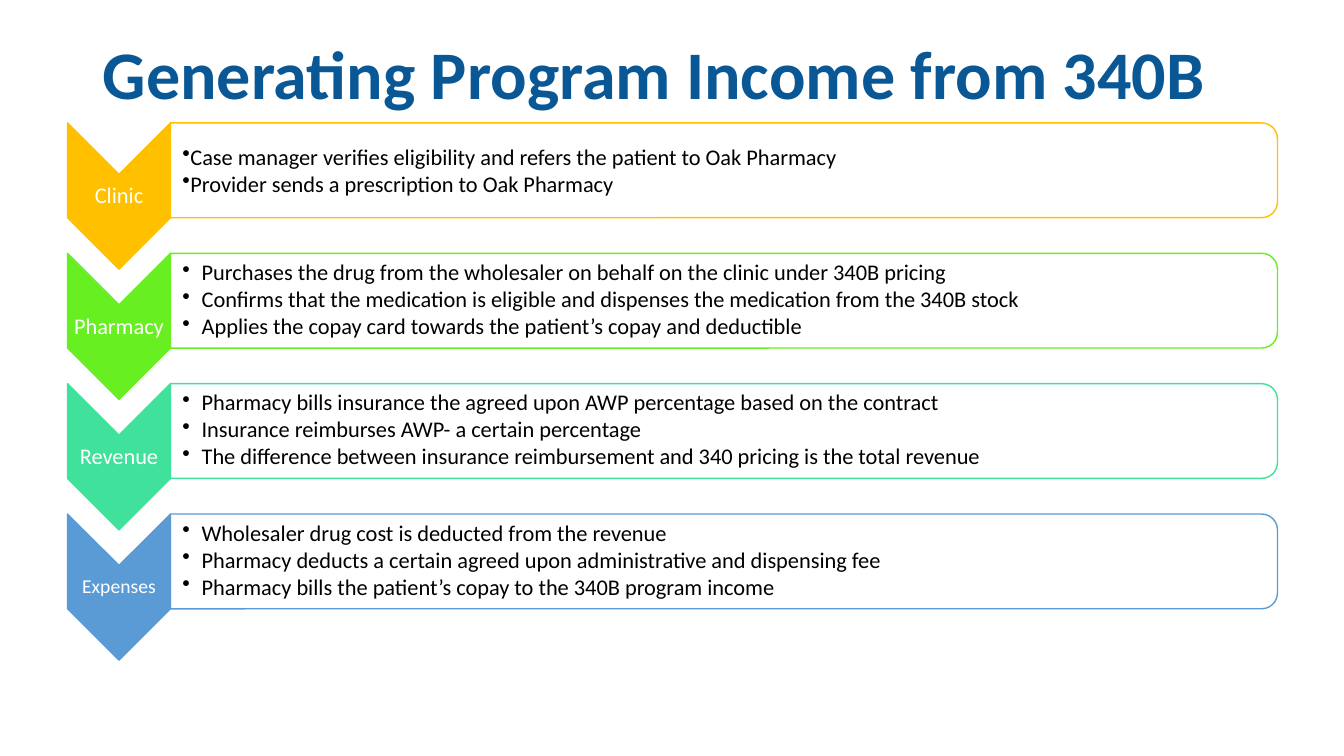
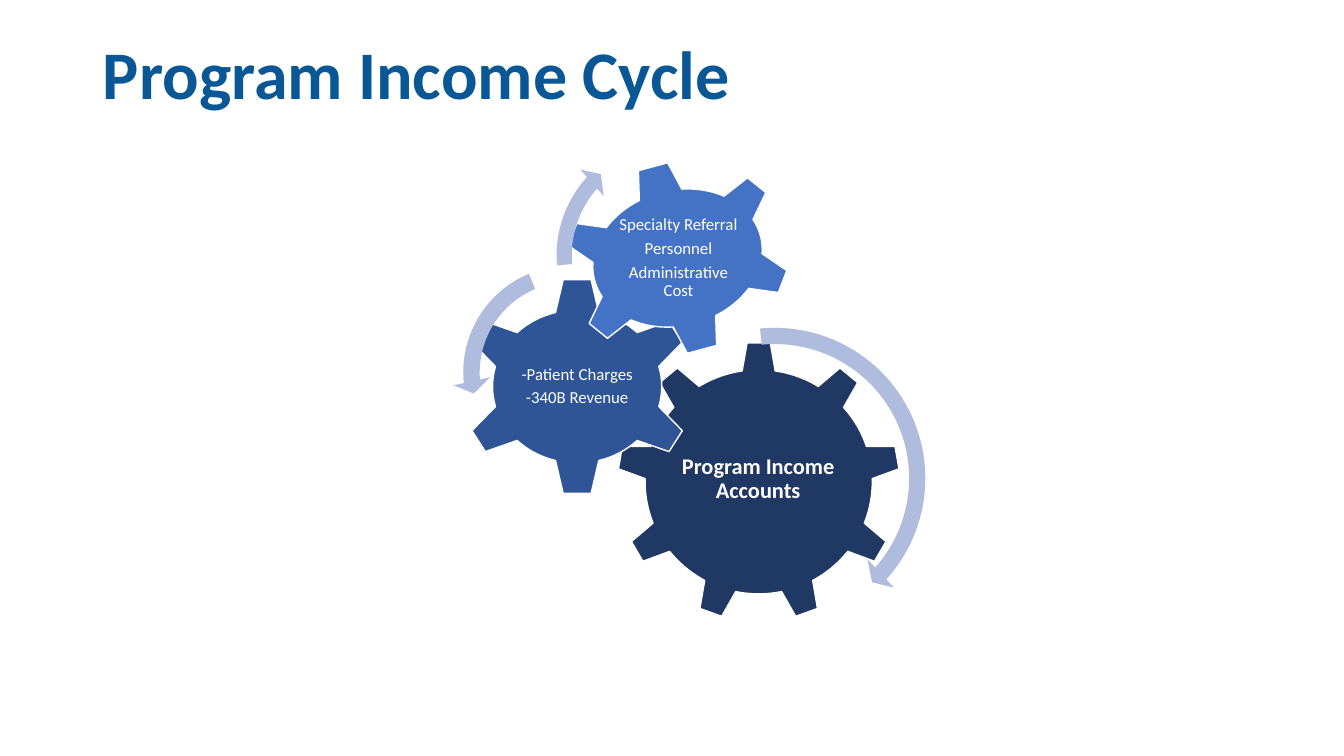
from lxml.etree import SubElement
from pptx import Presentation
from pptx.dml.color import RGBColor
from pptx.enum.shapes import MSO_SHAPE as Preset
from pptx.enum.text import MSO_ANCHOR as Anchor, MSO_AUTO_SIZE as AutoSize, PP_ALIGN as Align
from pptx.oxml.ns import qn
from pptx.util import Inches, Pt

FONT = "Calibri"
WHITE = RGBColor(0xFF, 0xFF, 0xFF)
BLACK = RGBColor(0x00, 0x00, 0x00)
TITLE_BLUE = RGBColor(0x09, 0x58, 0x95)
AMBER = RGBColor(0xFF, 0xC0, 0x00)
GREEN = RGBColor(0x67, 0xEF, 0x21)
MINT = RGBColor(0x3F, 0xE1, 0x9B)
SKY = RGBColor(0x5B, 0x9B, 0xD5)
NAVY = RGBColor(0x20, 0x38, 0x64)
DEEP_BLUE = RGBColor(0x2F, 0x55, 0x97)
MID_BLUE = RGBColor(0x44, 0x72, 0xC4)
PALE_BLUE = RGBColor(0xB0, 0xBC, 0xDE)

ROW_TOP = 1.26
ROW_PITCH = 3.88 / 3
BULLET_INDENT = 0.19

# Stage, colour, label size, bullet indent, bullets
STAGES = [
    ("Clinic", AMBER, 16, 0, [
        "Case manager verifies eligibility and refers the patient to Oak Pharmacy",
        "Provider sends a prescription to Oak Pharmacy"]),
    ("Pharmacy", GREEN, 16, BULLET_INDENT, [
        "Purchases the drug from the wholesaler on behalf on the clinic under 340B pricing",
        "Confirms that the medication is eligible and dispenses the medication from the 340B stock",
        "Applies the copay card towards the patient’s copay and deductible"]),
    ("Revenue", MINT, 16, BULLET_INDENT, [
        "Pharmacy bills insurance the agreed upon AWP percentage based on the contract",
        "Insurance reimburses AWP- a certain percentage",
        "The difference between insurance reimbursement and 340 pricing is the total revenue"]),
    ("Expenses", SKY, 14, BULLET_INDENT, [
        "Wholesaler drug cost is deducted from the revenue",
        "Pharmacy deducts a certain agreed upon administrative and dispensing fee",
        "Pharmacy bills the patient’s copay to the 340B program income"]),
]

# Preset, box, rotation, colour, label box, label lines, size, bold
GEARS = [
    (Preset.GEAR_9, (6.12, 3.39, 2.81, 2.78), 0, NAVY,
     (6.68, 4.04, 1.68, 1.43), ["Program Income Accounts"], 16, True),
    (Preset.GEAR_6, (4.56, 2.75, 2.33, 2.17), 0, DEEP_BLUE,
     (5.13, 3.3, 1.19, 1.07), ["-Patient Charges", "-340B Revenue"], 12, False),
    (Preset.GEAR_6, (5.58, 1.6, 2.28, 1.92), 345, MID_BLUE,
     (6.11, 2, 1.24, 1.12), ["Specialty Referral", "Personnel", "Administrative Cost"], 12, False),
]

# Preset, box, adjustments
ARROWS = [
    (Preset.CIRCULAR_ARROW, (6.08, 3.14, 3.21, 3.21), (0.05, 2.99, 25.16, 158.63, 0.06)),
    (Preset.LEFT_CIRCULAR_ARROW, (4.49, 2.53, 2.33, 2.33), (0.07, 4.3, 104.89, 148.38, 0.08)),
    (Preset.CIRCULAR_ARROW, (5.42, 1.28, 2.51, 2.51), (0.06, 3.94, 133.14, 105.08, 0.07)),
]


def set_bullet(paragraph, indent):
    properties = paragraph._p.get_or_add_pPr()
    properties.set("marL", str(Inches(indent)))
    properties.set("indent", str(Inches(-indent)))
    SubElement(properties, qn("a:buChar")).set("char", "•")


class Deck:
    def __init__(self):
        self.presentation = Presentation()
        self.presentation.slide_width = Inches(13.33)
        self.presentation.slide_height = Inches(7.5)

    def style_font(self, paragraph, size, color, bold=False):
        font = paragraph.font
        font.name, font.size, font.bold = FONT, Pt(size), bold
        font.color.rgb = color

    def new_slide(self, title):
        """Start a slide whose later elements go into one diagram group."""
        slide = self.presentation.slides.add_slide(self.presentation.slide_layouts[5])
        heading = slide.shapes.title
        heading.left, heading.top = Inches(0.92), Inches(0.31)
        heading.width, heading.height = Inches(11.5), Inches(0.91)
        frame = heading.text_frame
        frame.text = title
        frame.auto_size = AutoSize.NONE
        frame.vertical_anchor = Anchor.MIDDLE
        paragraph = frame.paragraphs[0]
        paragraph.alignment = Align.LEFT
        paragraph.line_spacing = 0.9
        self.style_font(paragraph, 48.6, TITLE_BLUE, True)
        self.diagram = slide.shapes.add_group_shape().shapes

    def shape(self, preset, box, fill, line=None, rotation=0, adjustments=()):
        shape = self.diagram.add_shape(preset, *map(Inches, box))
        shape.shadow.inherit = False
        shape.rotation = rotation
        shape.fill.solid()
        shape.fill.fore_color.rgb = fill
        if line is None:
            shape.line.fill.background()
        else:
            shape.line.color.rgb = line
            shape.line.width = Pt(1)
        for index, value in enumerate(adjustments):
            shape.adjustments[index] = value
        return shape

    def upright_box(self, preset, box, fill, line):
        """Draw a preset turned a quarter clockwise so that it covers box."""
        left, top, width, height = box
        shift = (width - height) / 2
        return self.shape(preset, (left + shift, top - shift, height, width), fill, line, 90)

    def text_box(self, box, lines, inset):
        """Add a middle-anchored text box and return its paragraphs."""
        frame = self.diagram.add_textbox(*map(Inches, box)).text_frame
        frame.word_wrap = True
        frame.vertical_anchor = Anchor.MIDDLE
        frame.margin_left = frame.margin_right = Inches(inset)
        frame.margin_top = frame.margin_bottom = Inches(inset)
        frame.text = "\n".join(lines)
        return frame.paragraphs

    def label(self, box, lines, size, bold=False, inset=0.02):
        for paragraph in self.text_box(box, lines, inset):
            paragraph.alignment = Align.CENTER
            paragraph.line_spacing = 0.9
            paragraph.space_after = Pt(4)
            self.style_font(paragraph, size, WHITE, bold)

    def bullet_list(self, box, lines, indent):
        left, top, width, height = box
        margin = 0.11
        for paragraph in self.text_box((left + margin, top, width - margin, height), lines, 0.01):
            set_bullet(paragraph, indent)
            if indent:
                paragraph.line_spacing = 0.9
                paragraph.space_after = Pt(2)
            self.style_font(paragraph, 16, BLACK)

    def stage(self, top, name, color, label_size, indent, bullets):
        """Draw one process row: chevron, label, panel and bullets."""
        self.upright_box(Preset.CHEVRON, (0.67, top - 0.04, 1.02, 1.45), color, color)
        self.label((0.67, top + 0.47, 1.02, 0.44), [name], label_size, inset=0.01)
        panel = self.upright_box(Preset.ROUND_2_SAME_RECTANGLE,
                                 (1.69, top - 0.04, 10.98, 0.94), WHITE, color)
        white = panel.fill._xPr.find(qn("a:solidFill"))[0]
        SubElement(white, qn("a:alpha")).set("val", "90000")
        self.bullet_list((1.69, top, 10.93, 0.85), bullets, indent)


def main():
    deck = Deck()

    deck.new_slide("Generating Program Income from 340B")
    for row, stage in enumerate(STAGES):
        deck.stage(ROW_TOP + row * ROW_PITCH, *stage)

    deck.new_slide("Program Income Cycle")
    for preset, box, rotation, color, label_box, lines, size, bold in GEARS:
        deck.shape(preset, box, color, WHITE, rotation)
        deck.label(label_box, lines, size, bold)
    for preset, box, adjustments in ARROWS:
        deck.shape(preset, box, PALE_BLUE, adjustments=adjustments)

    deck.presentation.save("out.pptx")


if __name__ == "__main__":
    main()
